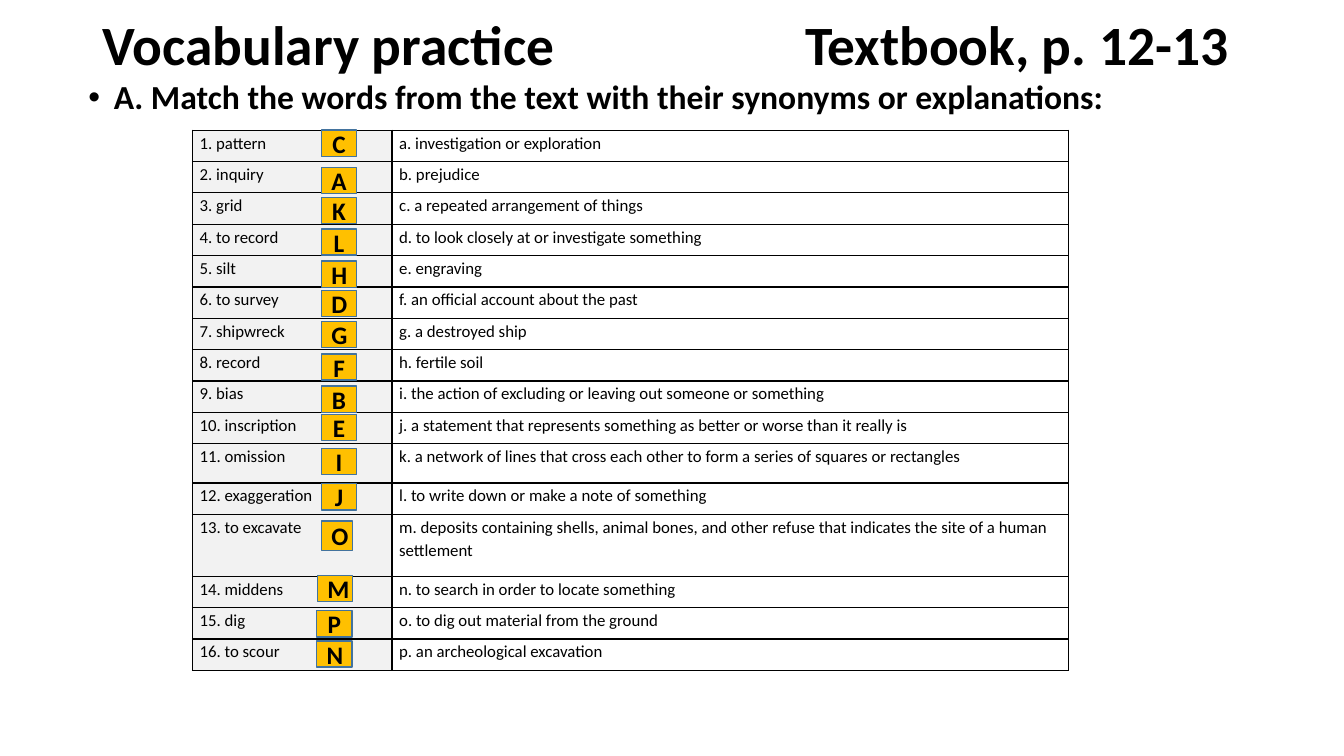
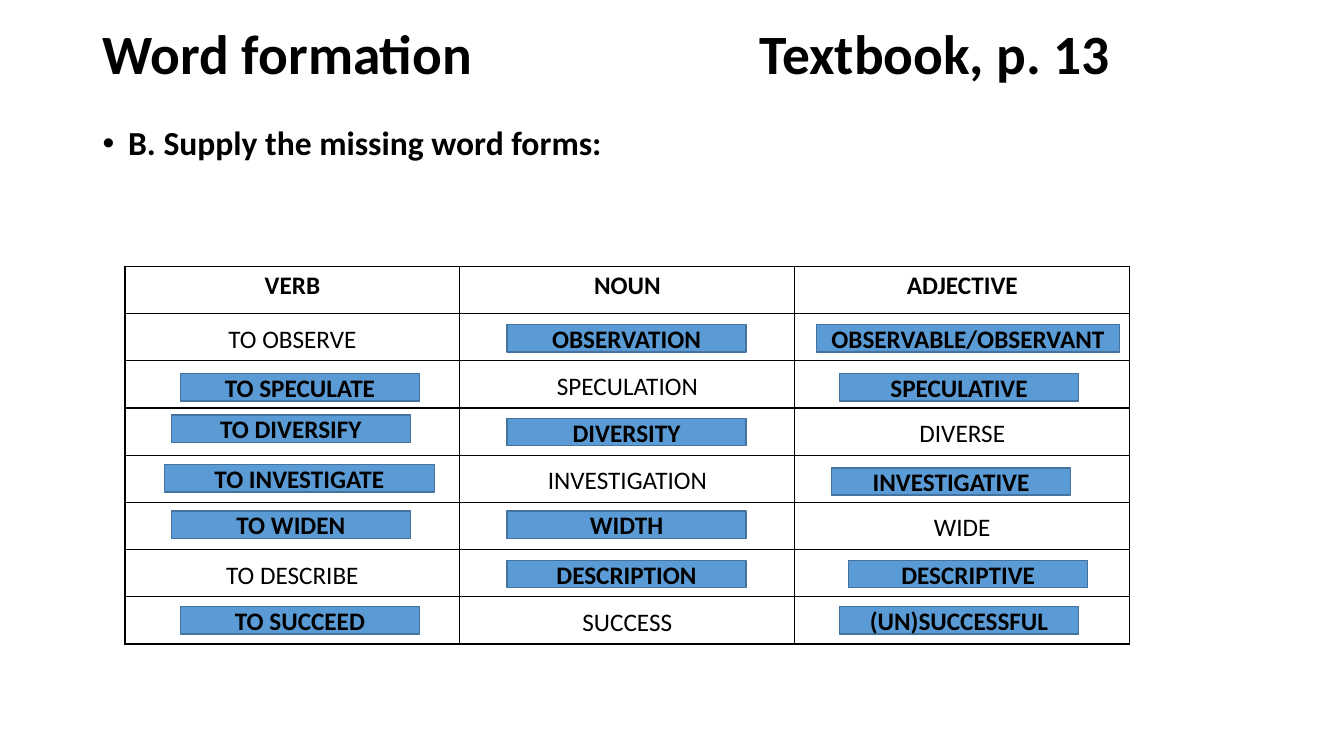
"""Build two vocabulary exercise slides with answer labels over their tables."""
import dataclasses

import lxml.etree
import pptx
import pptx.dml.color
import pptx.enum.shapes
import pptx.enum.text
import pptx.oxml.ns
import pptx.presentation
import pptx.slide
import pptx.table
import pptx.text.text
import pptx.util

Cm = pptx.util.Cm
Pt = pptx.util.Pt
RGB = pptx.dml.color.RGBColor
ALIGN = pptx.enum.text.PP_ALIGN
ANCHOR = pptx.enum.text.MSO_ANCHOR
qn = pptx.oxml.ns.qn


@dataclasses.dataclass(frozen=True)
class Theme:
    font: str = "Calibri"
    ink: str = "000000"
    word_fill: str = "F2F2F2"
    letter_fill: str = "FFC000"
    form_fill: str = "5B9BD5"
    answer_line: str = "43739E"
    title: float = 39.6
    task: float = 24
    answer: float = 18
    match: float = 12
    forms: float = 18
    line: float = 1


@dataclasses.dataclass(frozen=True)
class Heading:
    topic: str
    source: str
    middle: float
    tab: float
    task: str
    task_left: float
    task_top: float


@dataclasses.dataclass(frozen=True)
class Letter:
    text: str
    top: float
    left: float = 8.1
    width: float = 0.89
    height: float = 0.66


@dataclasses.dataclass(frozen=True)
class Form:
    text: str
    top: float
    left: float
    width: float = 6.02
    height: float = 0.69


@dataclasses.dataclass(frozen=True)
class Grid:
    left: float
    top: float
    cols: list[float]
    rows: list[float]
    cells: list[tuple[str, ...]]
    size: float


THEME = Theme()

MATCH_HEADING = Heading(
    "Vocabulary practice", "Textbook, p. 12-13", 1.21, 17.7,
    "A. Match the words from the text with their synonyms or explanations:", 1.98, 1.9)
FORMS_HEADING = Heading(
    "Word formation", "Textbook, p. 13", 1.42, 16.56,
    "B. Supply the missing word forms:", 2.34, 3.07)

MATCH_CELLS = [
    ("1. pattern", "a. investigation or exploration"),
    ("2. inquiry", "b. prejudice"),
    ("3. grid", "c. a repeated arrangement of things"),
    ("4. to record", "d. to look closely at or investigate something"),
    ("5. silt", "e. engraving"),
    ("6. to survey", "f. an official account about the past"),
    ("7. shipwreck", "g. a destroyed ship"),
    ("8. record", "h. fertile soil"),
    ("9. bias", "i. the action of excluding or leaving out someone or something"),
    ("10. inscription",
     "j. a statement that represents something as better or worse than it really is"),
    ("11. omission",
     "k. a network of lines that cross each other to form a series of squares or rectangles"),
    ("12. exaggeration", "l. to write down or make a note of something"),
    ("13. to excavate",
     "m. deposits containing shells, animal bones, and other refuse that indicates "
     "the site of a human settlement"),
    ("14. middens", "n. to search in order to locate something"),
    ("15. dig", "o. to dig out material from the ground"),
    ("16. to scour", "p. an archeological excavation"),
]
FORMS_CELLS = [
    ("VERB", "NOUN", "ADJECTIVE"),
    ("TO OBSERVE", "", ""),
    ("", "SPECULATION", ""),
    ("", "", "DIVERSE"),
    ("", "INVESTIGATION", ""),
    ("", "", "WIDE"),
    ("TO DESCRIBE", "", ""),
    ("", "SUCCESS", ""),
]

MATCH_GRID = Grid(4.85, 3.28, [5.03, 17.04],
                  [0.79] * 10 + [0.99, 0.79, 1.56] + [0.79] * 3, MATCH_CELLS, THEME.match)
FORMS_GRID = Grid(3.15, 6.71, [8.44] * 3, [1.19] * 8, FORMS_CELLS, THEME.forms)

LETTERS = [
    Letter("C", 3.28), Letter("A", 4.22), Letter("K", 4.98), Letter("L", 5.77),
    Letter("H", 6.58), Letter("D", 7.32), Letter("G", 8.1), Letter("F", 8.92),
    Letter("B", 9.73), Letter("E", 10.44), Letter("I", 11.3), Letter("J", 12.19),
    Letter("O", 13.13, width=0.79, height=0.74), Letter("M", 14.5, 8),
    Letter("P", 15.39, 7.98), Letter("N", 16.15, 7.98),
]
FORMS = [
    Form("OBSERVATION", 8.18, 12.78),
    Form("OBSERVABLE/OBSERVANT", 8.18, 20.57, 7.65),
    Form("TO SPECULATE", 9.42, 4.55),
    Form("SPECULATIVE", 9.42, 21.16),
    Form("TO DIVERSIFY", 10.46, 4.32),
    Form("DIVERSITY", 10.54, 12.78),
    Form("TO INVESTIGATE", 11.71, 4.14, 6.81),
    Form("INVESTIGATIVE", 11.79, 20.96),
    Form("TO WIDEN", 12.88, 4.32),
    Form("WIDTH", 12.88, 12.78),
    Form("DESCRIPTION", 14.12, 12.78),
    Form("DESCRIPTIVE", 14.12, 21.39),
    Form("TO SUCCEED", 15.29, 4.55),
    Form("(UN)SUCCESSFUL", 15.29, 21.16),
]


def format_runs(p: pptx.text.text._Paragraph, size: float, bold: bool) -> None:
    for r in p.runs:
        r.font.name = THEME.font
        r.font.size = Pt(size)
        r.font.bold = bold
        r.font.color.rgb = RGB.from_string(THEME.ink)


def add_line(s: pptx.slide.Slide, text: str, left: float, top: float, height: float,
             size: float) -> pptx.text.text._Paragraph:
    tf = s.shapes.add_textbox(Cm(left), Cm(top), Cm(29.21), Cm(height)).text_frame
    tf.word_wrap = True
    tf.text = text
    p = tf.paragraphs[0]
    p.line_spacing = 0.9
    format_runs(p, size, True)
    return p


def add_heading(s: pptx.slide.Slide, heading: Heading) -> None:
    height = 0.84
    p = add_line(s, f"{heading.topic}\t{heading.source}", 2.34,
                 heading.middle - height / 2, height, THEME.title)
    p._parent.vertical_anchor = ANCHOR.MIDDLE
    tabs = lxml.etree.SubElement(p._p.get_or_add_pPr(), qn("a:tabLst"))
    lxml.etree.SubElement(tabs, qn("a:tab"), pos=str(Cm(heading.tab)), algn="l")

    p = add_line(s, heading.task, heading.task_left, heading.task_top, 1.2, THEME.task)
    p.space_before = Pt(10)
    pPr = p._p.get_or_add_pPr()
    indent = Cm(0.64)
    pPr.set("marL", str(indent))
    pPr.set("indent", str(-indent))
    lxml.etree.SubElement(pPr, qn("a:buFont"), typeface="Arial")
    lxml.etree.SubElement(pPr, qn("a:buChar"), char="•")


def add_borders(cell: pptx.table._Cell) -> None:
    tcPr = cell._tc.get_or_add_tcPr()
    for side in ("lnL", "lnR", "lnT", "lnB"):
        ln = lxml.etree.SubElement(tcPr, qn(f"a:{side}"), w=str(Pt(THEME.line)))
        fill = lxml.etree.SubElement(ln, qn("a:solidFill"))
        lxml.etree.SubElement(fill, qn("a:srgbClr"), val=THEME.ink)


def add_grid(s: pptx.slide.Slide, grid: Grid) -> pptx.table.Table:
    table = s.shapes.add_table(len(grid.rows), len(grid.cols), Cm(grid.left), Cm(grid.top),
                               Cm(sum(grid.cols)), Cm(sum(grid.rows))).table
    table.first_row = table.horz_banding = False
    for column, width in zip(table.columns, grid.cols):
        column.width = Cm(width)
    for row, height, texts in zip(table.rows, grid.rows, grid.cells):
        row.height = Cm(height)
        for cell, text in zip(row.cells, texts):
            cell.margin_left = cell.margin_right = Cm(0.18)
            cell.margin_top = cell.margin_bottom = 0
            add_borders(cell)
            cell.fill.background()
            cell.text_frame.text = text
            p = cell.text_frame.paragraphs[0]
            p.line_spacing = 1.15
            format_runs(p, grid.size, False)
    return table


def add_answer(s: pptx.slide.Slide, answer: Letter | Form, fill: str) -> None:
    sp = s.shapes.add_shape(pptx.enum.shapes.MSO_SHAPE.RECTANGLE, Cm(answer.left),
                            Cm(answer.top), Cm(answer.width), Cm(answer.height))
    sp.shadow.inherit = False
    sp.fill.solid()
    sp.fill.fore_color.rgb = RGB.from_string(fill)
    sp.line.color.rgb = RGB.from_string(THEME.answer_line)
    sp.line.width = Pt(THEME.line)
    tf = sp.text_frame
    tf.text = answer.text
    tf.vertical_anchor = ANCHOR.MIDDLE
    p = tf.paragraphs[0]
    p.alignment = ALIGN.CENTER
    format_runs(p, THEME.answer, True)


def add_exercise(prs: pptx.presentation.Presentation, heading: Heading, grid: Grid,
                 answers: list[Letter] | list[Form], fill: str) -> pptx.table.Table:
    s = prs.slides.add_slide(prs.slide_layouts[6])
    add_heading(s, heading)
    table = add_grid(s, grid)
    for answer in answers:
        add_answer(s, answer, fill)
    return table


def main() -> None:
    prs = pptx.Presentation()
    prs.slide_width, prs.slide_height = Cm(33.87), Cm(19.05)

    match = add_exercise(prs, MATCH_HEADING, MATCH_GRID, LETTERS, THEME.letter_fill)
    for row in match.rows:
        fill = row.cells[0].fill
        fill.solid()
        fill.fore_color.rgb = RGB.from_string(THEME.word_fill)

    forms = add_exercise(prs, FORMS_HEADING, FORMS_GRID, FORMS, THEME.form_fill)
    for i, row in enumerate(forms.rows):
        for cell in row.cells:
            cell.vertical_anchor = ANCHOR.MIDDLE if i else ANCHOR.TOP
            p = cell.text_frame.paragraphs[0]
            p.alignment = ALIGN.CENTER
            format_runs(p, THEME.forms, i == 0)

    prs.save("out.pptx")


if __name__ == "__main__":
    main()
